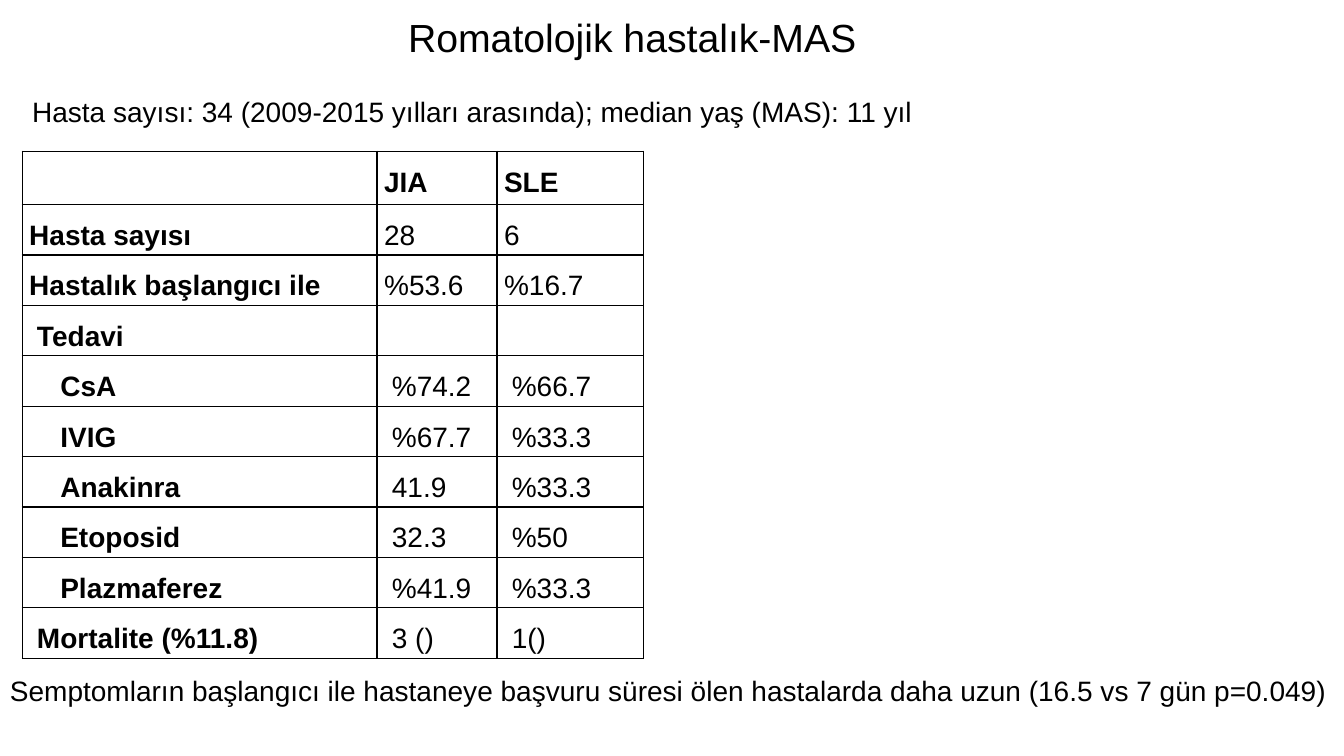
from dataclasses import dataclass

from lxml.etree import SubElement
from pptx import Presentation
from pptx.dml.color import RGBColor as RGB
from pptx.enum.text import MSO_AUTO_SIZE as AutoSize, PP_ALIGN as Align
from pptx.oxml.ns import qn
from pptx.util import Inches, Pt


@dataclass(frozen=True)
class Theme:
    font: str = "Arial"
    ink: str = "000000"
    title_size: int = 28
    body_size: int = 20
    border_width: int = 1
    line_spacing: float = 1.5
    cell_margin: float = 0.07
    indent_step: float = 0.077


class SlideBuilder:
    def __init__(self, slide, theme):
        self.slide, self.theme = slide, theme

    def style(self, p, size, bold=False):
        p.font.name = self.theme.font
        p.font.size = Pt(size)
        p.font.bold = bold
        p.font.color.rgb = RGB.from_string(self.theme.ink)

    def text(self, text, left, top, width, height, size, align=Align.LEFT):
        box = self.slide.shapes.add_textbox(*map(Inches, (left, top, width, height)))
        tf = box.text_frame
        tf.word_wrap = True
        tf.auto_size = AutoSize.SHAPE_TO_FIT_TEXT
        p = tf.paragraphs[0]
        p.text = text
        p.alignment = align
        self.style(p, size)

    def border(self, cell):
        # Border lines come before the fill in the cell properties
        tc_pr = cell._tc.get_or_add_tcPr()
        for i, side in enumerate(("lnL", "lnR", "lnT", "lnB")):
            ln = SubElement(tc_pr, qn(f"a:{side}"), w=str(Pt(self.theme.border_width)))
            fill = SubElement(ln, qn("a:solidFill"))
            SubElement(fill, qn("a:srgbClr"), val=self.theme.ink)
            tc_pr.insert(i, ln)

    def cell(self, cell, text, bold, indent):
        t = self.theme
        cell.margin_left = Inches(t.cell_margin + indent * t.indent_step)
        cell.margin_right = Inches(t.cell_margin)
        cell.margin_top = cell.margin_bottom = 0
        cell.fill.background()
        self.border(cell)
        p = cell.text_frame.paragraphs[0]
        p.text = text
        p.line_spacing = t.line_spacing
        self.style(p, t.body_size, bold)

    def table(self, rows, left, top, col_widths, row_heights):
        size = Inches(sum(col_widths)), Inches(sum(row_heights))
        table = self.slide.shapes.add_table(
            len(rows), len(col_widths), Inches(left), Inches(top), *size).table
        table.first_row = table.horz_banding = False
        for column, width in zip(table.columns, col_widths):
            column.width = Inches(width)
        for r, (label_indent, value_indent, *texts) in enumerate(rows):
            table.rows[r].height = Inches(row_heights[r])
            for c, text in enumerate(texts):
                self.cell(table.cell(r, c), text, bold=r == 0 or c == 0,
                          indent=value_indent if c else label_indent)


# Label indent, value indent (in steps), then the three cell texts
PATIENT_ROWS = [
    (0, 0, "", "JIA", "SLE"),
    (0, 0, "Hasta sayısı", "28", "6"),
    (0, 0, "Hastalık başlangıcı ile", "%53.6", "%16.7"),
    (1, 0, "Tedavi", "", ""),
    (4, 1, "CsA", "%74.2", "%66.7"),
    (4, 1, "IVIG", "%67.7", "%33.3"),
    (4, 1, "Anakinra", "41.9", "%33.3"),
    (4, 1, "Etoposid", "32.3", "%50"),
    (4, 1, "Plazmaferez", "%41.9", "%33.3"),
    (1, 1, "Mortalite (%11.8)", "3 ()", "1()"),
]


def main():
    prs = Presentation()
    prs.slide_width, prs.slide_height = Inches(13.33), Inches(7.5)
    theme = Theme()
    s = SlideBuilder(prs.slides.add_slide(prs.slide_layouts[6]), theme)

    # Patient table
    heights = [0.53] + [0.5] * (len(PATIENT_ROWS) - 1)
    s.table(PATIENT_ROWS, 0.22, 1.5, (3.52, 1.19, 1.45), heights)

    # Title, cohort summary and closing finding
    s.text("Romatolojik hastalık-MAS", 0.3, 0.08, 11.94, 0.57,
           theme.title_size, Align.CENTER)
    s.text("Hasta sayısı: 34 (2009-2015 yılları arasında); median yaş (MAS): 11 yıl",
           0.22, 0.89, 11.92, 0.44, theme.body_size)
    s.text("Semptomların başlangıcı ile hastaneye başvuru süresi ölen hastalarda "
           "daha uzun (16.5 vs 7 gün p=0.049)",
           0, 6.63, 14.26, 0.44, theme.body_size)

    prs.save("out.pptx")


if __name__ == "__main__":
    main()
